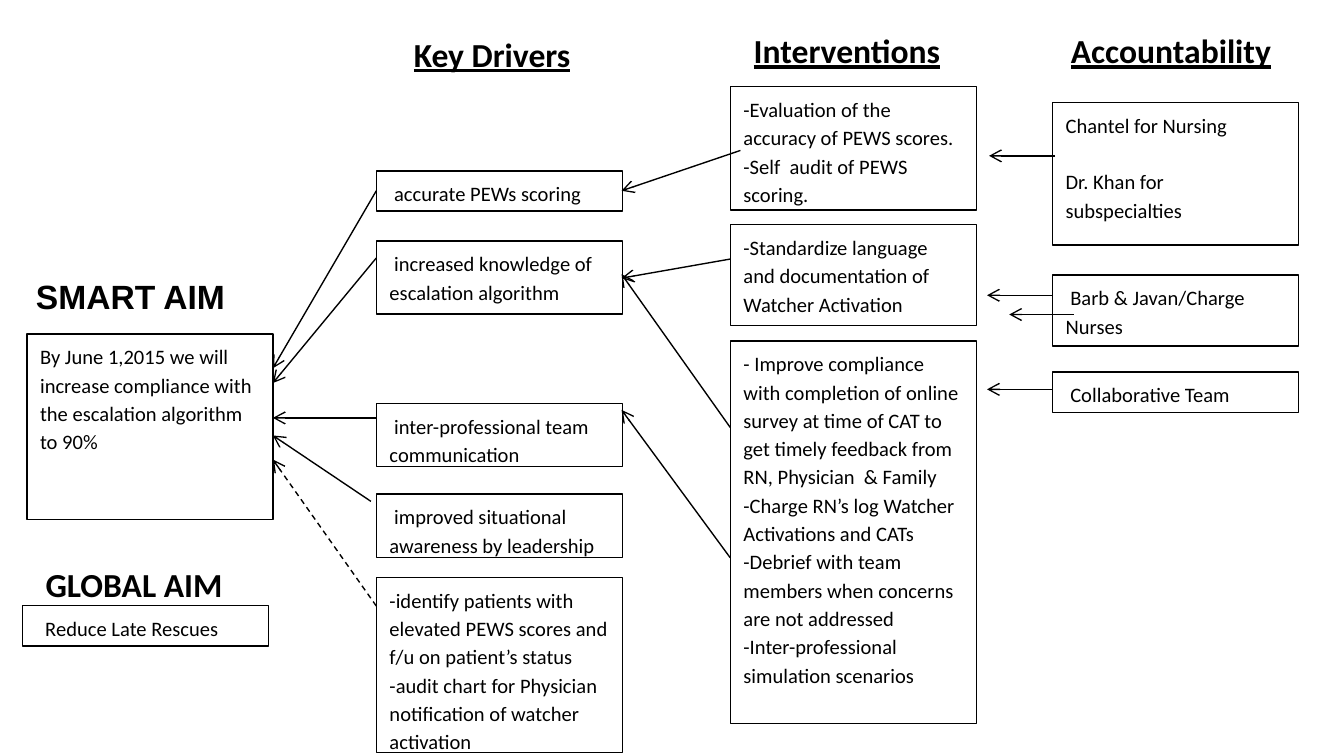
from dataclasses import dataclass

from lxml import etree
from pptx import Presentation
from pptx.dml.color import RGBColor
from pptx.enum import dml, shapes, text
from pptx.oxml import ns
from pptx.util import Pt

BLACK = RGBColor(0, 0, 0)
WHITE = RGBColor(255, 255, 255)
WIDE = 131.8
LINE = 0.75
AIM, DRIVER, ACTION, OWNER = 14.4, 201.6, 391.2, 563.8
HUB = 146.2
EDGE = 333


@dataclass
class Box:
    left: float
    top: float
    high: float
    lines: list[str]
    indent: float = 0
    gap: float = 0


@dataclass
class Arrow:
    x1: float
    y1: float
    x2: float
    y2: float
    dash: bool = False


@dataclass
class Head:
    left: float
    top: float
    wide: float
    words: str
    font: str = "Calibri"
    under: bool = True


BOXES = [
    Box(AIM, 179, 99.4, ["By June 1,2015 we will increase compliance with "
                         "the escalation algorithm to 90%"]),
    Box(12.2, 324.5, 21.6, ["Reduce Late Rescues"], 5),
    Box(DRIVER, 91.6, 21.6, ["accurate PEWs scoring"], 2.5),
    Box(DRIVER, 129.2, 39, ["increased knowledge of escalation algorithm"], 2.5),
    Box(DRIVER, 216.2, 33.8, ["inter-professional team communication"], 2.5),
    Box(DRIVER, 264.7, 34, ["improved situational awareness by leadership"], 2.5),
    Box(DRIVER, 309.4, 93.8, [
        "-identify patients with elevated PEWS scores and f/u on patient’s status",
        "-audit chart for Physician notification of watcher activation"]),
    Box(ACTION, 46.4, 66.2, ["-Evaluation of the accuracy of PEWS scores.",
                             "-Self  audit of PEWS scoring."]),
    Box(ACTION, 120.4, 54, ["-Standardize language and documentation of "
                            "Watcher Activation"]),
    Box(ACTION, 182.7, 205, [
        "- Improve compliance with completion of online survey at time of CAT "
        "to get timely feedback from RN, Physician  & Family",
        "-Charge RN’s log Watcher Activations and CATs",
        "-Debrief with team members when concerns are not addressed",
        "-Inter-professional simulation scenarios"]),
    Box(OWNER, 54.8, 76.4, ["Chantel for Nursing",
                            "Dr. Khan for subspecialties"], gap=15.2),
    Box(OWNER, 147.4, 38, ["Barb & Javan/Charge Nurses"], 2.5),
    Box(OWNER, 199.3, 21.6, ["Collaborative Team"], 2.5),
]

ARROWS = [
    Arrow(DRIVER, 102.2, HUB, 197.3),
    Arrow(DRIVER, 138.2, HUB, 205.2),
    Arrow(DRIVER, 324.7, HUB, 246.2, True),
    Arrow(DRIVER, 223.9, HUB, 223.9),
    Arrow(198.7, 268.6, HUB, 233.3),
    Arrow(396.7, 80.6, EDGE, 102.2),
    Arrow(ACTION, 138.8, EDGE, 149),
    Arrow(ACTION, 229, EDGE, 146.9),
    Arrow(ACTION, 298.8, EDGE, 219.6),
    Arrow(565.2, 83.5, 529.9, 83.5),
    Arrow(OWNER, 158.2, 528.8, 158.2),
    Arrow(575.3, 168.5, 540.7, 168.5),
    Arrow(OWNER, 208.6, 528.8, 208.6),
]

HEADS = [
    Head(12.2, 144.4, 119.5, "SMART AIM", "Arial", False),
    Head(17.3, 298.5, 126, "GLOBAL AIM", under=False),
    Head(214.6, 14.4, 104, "Key Drivers"),
    Head(396.7, 12.4, 115.2, "Interventions"),
    Head(566.6, 12.4, 122.4, "Accountability"),
]


def write(para, words: str, size: float, face: str = "Calibri"):
    run = para.add_run()
    run.text = words
    run.font.size = Pt(size)
    run.font.name = face
    run.font.color.rgb = BLACK
    return run


def draw_box(slide, box: Box) -> None:
    shape = slide.shapes.add_shape(shapes.MSO_SHAPE.RECTANGLE, Pt(box.left),
                                   Pt(box.top), Pt(WIDE), Pt(box.high))
    shape.shadow.inherit = False
    shape.fill.solid()
    shape.fill.fore_color.rgb = WHITE
    shape.line.color.rgb = BLACK
    shape.line.width = Pt(LINE)
    frame = shape.text_frame
    frame.word_wrap = True
    frame.vertical_anchor = text.MSO_ANCHOR.TOP
    for i, words in enumerate(box.lines):
        para = frame.add_paragraph() if i else frame.paragraphs[0]
        para.alignment = text.PP_ALIGN.LEFT
        para.line_spacing = 1.15
        if i and box.gap:
            para.space_before = Pt(box.gap)
        if box.indent:
            para._p.get_or_add_pPr().set("indent", str(Pt(box.indent)))
        write(para, words, 11)


def draw_arrow(slide, arrow: Arrow) -> None:
    link = slide.shapes.add_connector(
        shapes.MSO_CONNECTOR.STRAIGHT, Pt(arrow.x1), Pt(arrow.y1),
        Pt(arrow.x2), Pt(arrow.y2))
    link.line.color.rgb = BLACK
    link.line.width = Pt(LINE)
    if arrow.dash:
        link.line.dash_style = dml.MSO_LINE.DASH
    tail = etree.SubElement(link.line._get_or_add_ln(), ns.qn("a:tailEnd"))
    tail.set("type", "arrow")
    etree.SubElement(link._element.spPr, ns.qn("a:effectLst"))


def draw_head(slide, head: Head) -> None:
    label = slide.shapes.add_textbox(Pt(head.left), Pt(head.top),
                                     Pt(head.wide), Pt(28.8))
    label.text_frame.word_wrap = False
    run = write(label.text_frame.paragraphs[0], head.words, 18, head.font)
    run.font.bold = True
    run.font.underline = head.under


def main() -> None:
    deck = Presentation()
    deck.slide_width, deck.slide_height = Pt(720), Pt(405)
    slide = deck.slides.add_slide(deck.slide_layouts[6])
    for box in BOXES:
        draw_box(slide, box)
    for arrow in ARROWS:
        draw_arrow(slide, arrow)
    for head in HEADS:
        draw_head(slide, head)
    deck.save("out.pptx")


if __name__ == "__main__":
    main()
